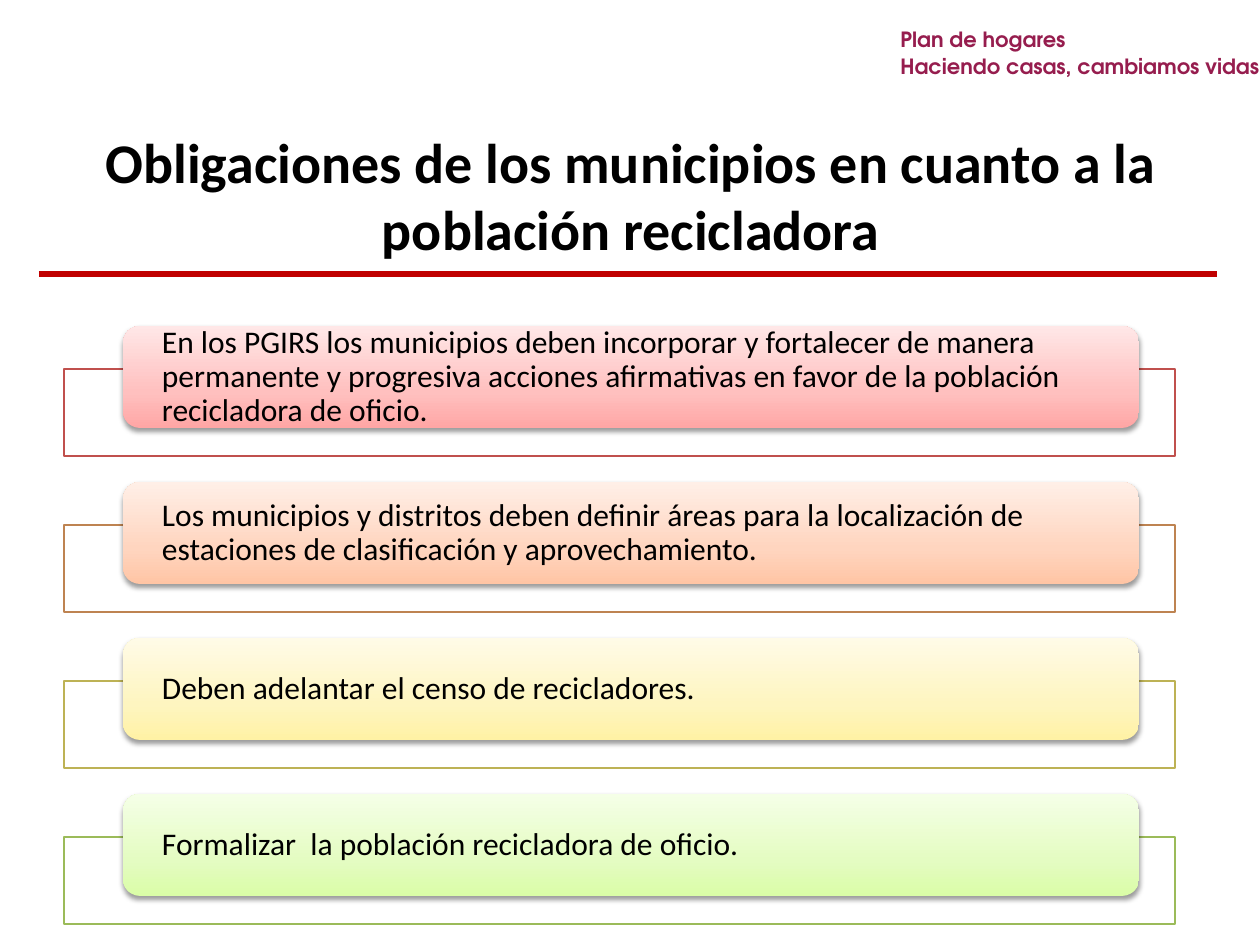
from copy import deepcopy

from lxml.etree import SubElement
from pptx import Presentation
from pptx.dml.color import RGBColor
from pptx.enum.shapes import MSO_CONNECTOR as CONNECTOR, MSO_SHAPE as SHAPE
from pptx.enum.text import MSO_ANCHOR as ANCHOR, PP_ALIGN as ALIGN
from pptx.oxml.ns import qn
from pptx.util import Emu, Pt

PX_PER_INCH = 126
BLACK = RGBColor(0x00, 0x00, 0x00)
WHITE = RGBColor(0xFF, 0xFF, 0xFF)
RED = RGBColor(0xC0, 0x00, 0x00)
PLUM = RGBColor(0x96, 0x1D, 0x4E)
BRICK = RGBColor(0xC0, 0x50, 0x4D)
OCHRE = RGBColor(0xBE, 0x83, 0x51)
SAND = RGBColor(0xBD, 0xB2, 0x55)
OLIVE = RGBColor(0x9B, 0xBB, 0x59)
PINKS = RGBColor(0xFF, 0xA6, 0xA5), RGBColor(0xFF, 0xC0, 0xBF), RGBColor(0xFF, 0xE7, 0xE7)
ORANGES = RGBColor(0xFF, 0xC5, 0xA5), RGBColor(0xFF, 0xD5, 0xBF), RGBColor(0xFF, 0xEF, 0xE7)
YELLOWS = RGBColor(0xFF, 0xF2, 0xA5), RGBColor(0xFE, 0xF5, 0xC0), RGBColor(0xFF, 0xFB, 0xE7)
GREENS = RGBColor(0xDA, 0xFD, 0xA7), RGBColor(0xE4, 0xFC, 0xC2), RGBColor(0xF5, 0xFF, 0xE7)

TITLE = "Obligaciones de los municipios en cuanto a la población recicladora"
SLOGAN = ["Plan de hogares", "Haciendo casas, cambiamos vidas"]
OBLIGATIONS = [
    ("En los PGIRS los municipios deben incorporar y fortalecer de manera permanente "
     "y progresiva acciones afirmativas en favor de la población recicladora de oficio.",
     BRICK, PINKS),
    ("Los municipios y distritos deben definir áreas para la localización de "
     "estaciones de clasificación y aprovechamiento.", OCHRE, ORANGES),
    ("Deben adelantar el censo de recicladores.", SAND, YELLOWS),
    ("Formalizar  la población recicladora de oficio.", OLIVE, GREENS),
]


def px(length):
    """Turn a length in px into EMU."""
    return Emu(round(length * 914400 / PX_PER_INCH))


def set_font(paragraph, name, size, color, bold=False):
    """Format every run of a paragraph."""
    for run in paragraph.runs:
        run.font.name = name
        run.font.size = Pt(size)
        run.font.bold = bold
        run.font.color.rgb = color


def add_outer_shadow(effects, blur, distance, angle, opacity):
    """Put a black outer shadow into an effect list."""
    shadow = SubElement(effects, qn("a:outerShdw"), blurRad=str(Pt(blur)),
                        dist=str(Pt(distance)), dir=str(angle * 60000), rotWithShape="0")
    color = SubElement(shadow, qn("a:srgbClr"), val=str(BLACK))
    SubElement(color, qn("a:alpha"), val=str(opacity * 1000))


def add_slogan(slide, left, top, width, line_height):
    """Stack the shadowed slogan lines from the given corner."""
    for index, line in enumerate(SLOGAN):
        box = slide.shapes.add_textbox(px(left), px(top + index * line_height),
                                       px(width), px(38))
        box.text_frame.text = line
        paragraph = box.text_frame.paragraphs[0]
        set_font(paragraph, "TeX Gyre Adventor", 12, PLUM, bold=True)
        properties = paragraph.runs[0].font._element
        effects = SubElement(properties, qn("a:effectLst"))
        properties.find(qn("a:solidFill")).addnext(effects)
        add_outer_shadow(effects, 3, 3, 45, 43)


def add_heading(slide, left, top, width, height):
    """Place the title and the red rule below it."""
    title = slide.shapes.title
    title.left, title.top, title.width, title.height = map(px, (left, top, width, height))
    title.text_frame.text = TITLE
    title.text_frame.vertical_anchor = ANCHOR.MIDDLE
    paragraph = title.text_frame.paragraphs[0]
    paragraph.alignment = ALIGN.CENTER
    set_font(paragraph, "Calibri", 32, BLACK, bold=True)
    rule_top = px(top + height + 1)
    rule = slide.shapes.add_connector(CONNECTOR.STRAIGHT, px(left - 25), rule_top,
                                      px(left + width + 19), rule_top)
    rule.line.color.rgb = RED
    rule.line.width = Pt(3)
    SubElement(rule._element.spPr, qn("a:effectLst"))


def set_gradient(shape, colors):
    """Fill a shape with three colours running upwards."""
    shape.fill.gradient()
    shape.fill.gradient_angle = 90
    stop_list = shape._element.spPr.find(qn("a:gradFill")).find(qn("a:gsLst"))
    stop_list.append(deepcopy(stop_list[0]))
    for stop, position, color in zip(shape.fill.gradient_stops, (0, 0.35, 1), colors):
        stop.position = position
        stop.color.rgb = color


def add_obligation(slide, left, top, width, text, line_color, colors):
    """Draw an outlined frame with a gradient label over its upper edge."""
    frame = slide.shapes.add_shape(SHAPE.RECTANGLE, px(left), px(top + 43), px(width), px(87))
    frame.shadow.inherit = False
    frame.fill.solid()
    frame.fill.fore_color.rgb = WHITE
    frame.line.color.rgb = line_color
    frame.line.width = Pt(0.75)

    label = slide.shapes.add_shape(SHAPE.ROUNDED_RECTANGLE, px(left + 59), px(top),
                                   px(1016), px(102))
    set_gradient(label, colors)
    label.line.fill.background()
    label.shadow.inherit = False
    add_outer_shadow(label._element.spPr.find(qn("a:effectLst")), 3.1, 1.6, 90, 38)

    text_frame = label.text_frame
    text_frame.word_wrap = True
    text_frame.vertical_anchor = ANCHOR.MIDDLE
    text_frame.margin_left = text_frame.margin_right = px(34)
    text_frame.margin_top = text_frame.margin_bottom = 0
    text_frame.text = text
    paragraph = text_frame.paragraphs[0]
    paragraph.alignment = ALIGN.LEFT
    paragraph.line_spacing = 0.9
    set_font(paragraph, "Calibri", 18, BLACK)


def add_obligations(slide, left, top, width, pitch):
    """Stack the obligations at an equal pitch."""
    for index, obligation in enumerate(OBLIGATIONS):
        add_obligation(slide, left, top + index * pitch, width, *obligation)


def main():
    """Build and save the slide."""
    presentation = Presentation()
    presentation.slide_width, presentation.slide_height = px(1260), px(945)
    slide = presentation.slides.add_slide(presentation.slide_layouts[5])
    add_slogan(slide, 888, 20, 446, 27)
    add_heading(slide, 64, 116, 1134, 157)
    add_obligations(slide, 64, 326, 1111, 156)
    presentation.save("out.pptx")


if __name__ == "__main__":
    main()
